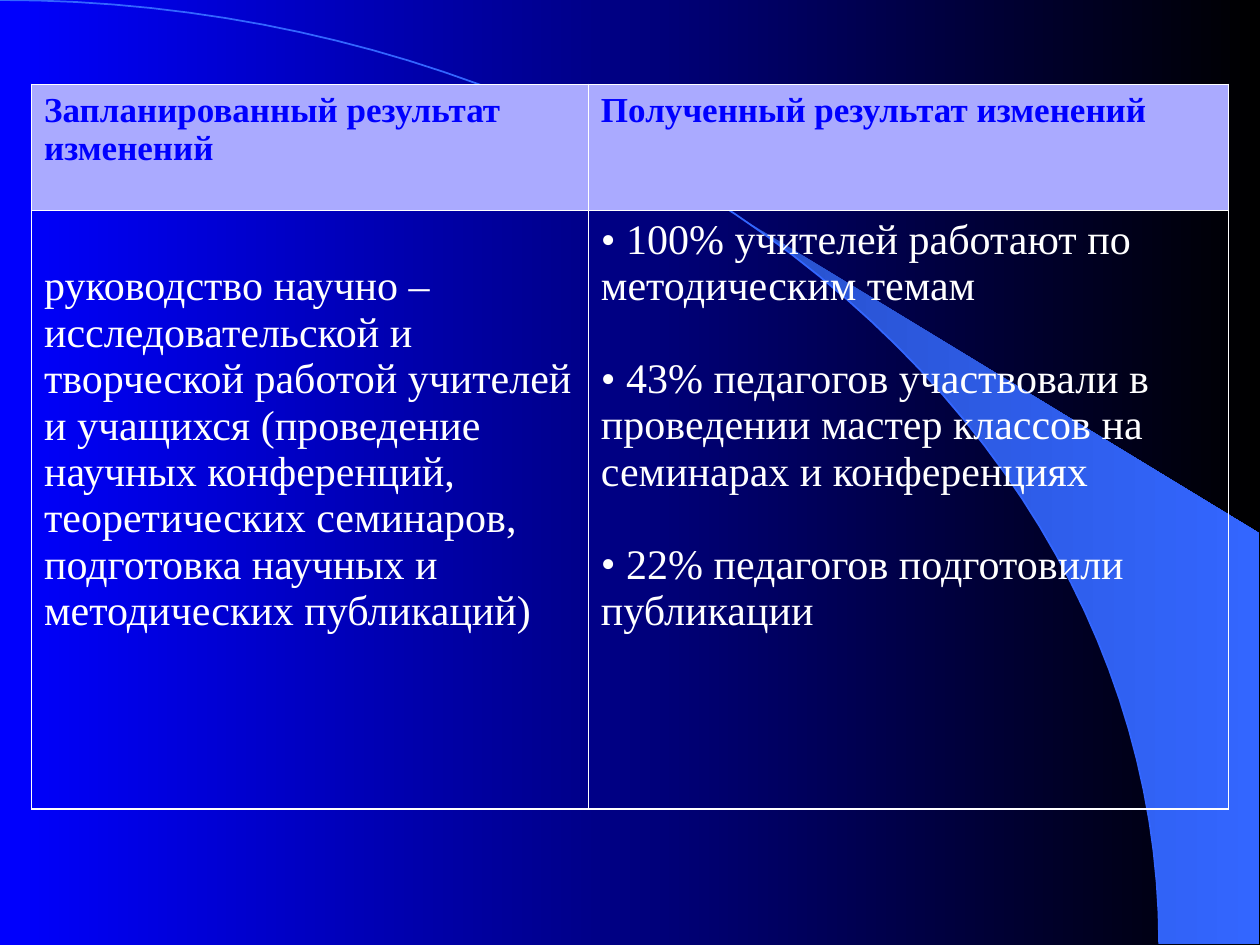
import math

from lxml import etree
from pptx import Presentation
from pptx import util as u
from pptx.dml import color
from pptx.oxml import ns

FONT = "Times New Roman"
ARC_WIDTH, ARC_HEIGHT = 9.2, 7.49
HEADER = {"size": u.Pt(20), "bold": True, "color": "0000FF"}
BODY = {"size": u.Pt(24), "bold": False, "color": "FFFFFF"}
HEADINGS = ["Запланированный результат изменений", "Полученный результат изменений"]
PLAN = ("руководство научно – исследовательской и творческой работой учителей и учащихся "
        "(проведение научных конференций, теоретических семинаров, "
        "подготовка научных и методических публикаций)")
RESULTS = [
    " 100% учителей работают по методическим темам",
    " 43% педагогов участвовали в проведении мастер классов на семинарах и конференциях",
    " 22% педагогов подготовили публикации",
]


def rgb(value):
    """Turn a hex string into a colour."""
    return color.RGBColor.from_string(value)


def set_gradient(fill, colors):
    """Fill from left to right between two colours."""
    fill.gradient()
    fill.gradient_angle = 0
    for stop, value in zip(fill.gradient_stops, colors):
        stop.color.rgb = rgb(value)


def arc_points(start, steps=48):
    """List points on the quarter ellipse from an angle to its right end."""
    angles = [start + (math.pi / 2 - start) * step / steps for step in range(steps + 1)]
    return [(ARC_WIDTH * math.sin(angle), ARC_HEIGHT * (1 - math.cos(angle))) for angle in angles]


def add_outline(page, points, close):
    """Draw a freeform through points given in inches."""
    points = [(u.Inches(x), u.Inches(y)) for x, y in points]
    builder = page.shapes.build_freeform(*points[0])
    builder.add_line_segments(points[1:], close=close)
    shape = builder.convert_to_shape()
    shape.shadow.inherit = False
    return shape


def add_swoosh(page):
    """Draw the bright band and the thin arc that continues it."""
    band = add_outline(page, arc_points(math.asin(0.64)) + [(9.99, 7.49), (9.99, 4.23)], True)
    set_gradient(band.fill, ["2851CC", "3366FF"])
    band.line.fill.background()
    arc = add_outline(page, arc_points(0), False)
    arc.fill.background()
    arc.line.color.rgb = rgb("3366FF")
    arc.line.width = u.Pt(1)


def set_borders(cell):
    """Give a cell thin white borders on all sides."""
    properties = cell._tc.get_or_add_tcPr()
    for side in ("lnL", "lnR", "lnT", "lnB"):
        line = etree.SubElement(properties, ns.qn(f"a:{side}"), w=str(u.Pt(1)))
        fill = etree.SubElement(line, ns.qn("a:solidFill"))
        etree.SubElement(fill, ns.qn("a:srgbClr"), val="FFFFFF")


def set_bullet(para):
    """Put a round bullet in front of a paragraph without an indent."""
    properties = para._p.get_or_add_pPr()
    properties.set("marL", "0")
    properties.set("indent", "0")
    etree.SubElement(properties, ns.qn("a:buFont"), typeface=FONT)
    etree.SubElement(properties, ns.qn("a:buChar"), char="•")


def fill_cell(cell, lines, style, fill=None, bulleted=False):
    """Write paragraphs into a cell and format it."""
    set_borders(cell)
    if fill:
        cell.fill.solid()
        cell.fill.fore_color.rgb = rgb(fill)
    else:
        cell.fill.background()
    frame = cell.text_frame
    for index, line in enumerate(lines):
        para = frame.add_paragraph() if index else frame.paragraphs[0]
        if index:
            para.space_before = u.Pt(26.5)
        if bulleted:
            set_bullet(para)
        span = para.add_run()
        span.text = line
        span.font.color.rgb = rgb(style["color"])
        for name, value in {"name": FONT, "size": style["size"], "bold": style["bold"]}.items():
            setattr(span.font, name, value)


def add_results_table(page):
    """Add the table of planned and achieved results."""
    table = page.shapes.add_table(
        2, 2, u.Inches(0.25), u.Inches(0.67), u.Inches(9.5), u.Inches(5.75)).table
    table.first_row = table.horz_banding = False
    for column, width in zip(table.columns, (4.42, 5.08)):
        column.width = u.Inches(width)
    for row, height in zip(table.rows, (1, 4.75)):
        row.height = u.Inches(height)
    for index, heading in enumerate(HEADINGS):
        fill_cell(table.cell(0, index), [heading], HEADER, fill="AAAAFF")
    plan = table.cell(1, 0)
    fill_cell(plan, [PLAN], BODY)
    plan.margin_top = u.Inches(0.42)
    fill_cell(table.cell(1, 1), RESULTS, BODY, bulleted=True)


def main():
    """Build the slide and save it."""
    deck = Presentation()
    deck.slide_width, deck.slide_height = u.Inches(10), u.Inches(7.5)
    page = deck.slides.add_slide(deck.slide_layouts[6])
    set_gradient(page.background.fill, ["0000FF", "000000"])
    add_swoosh(page)
    add_results_table(page)
    deck.save("out.pptx")


if __name__ == "__main__":
    main()
